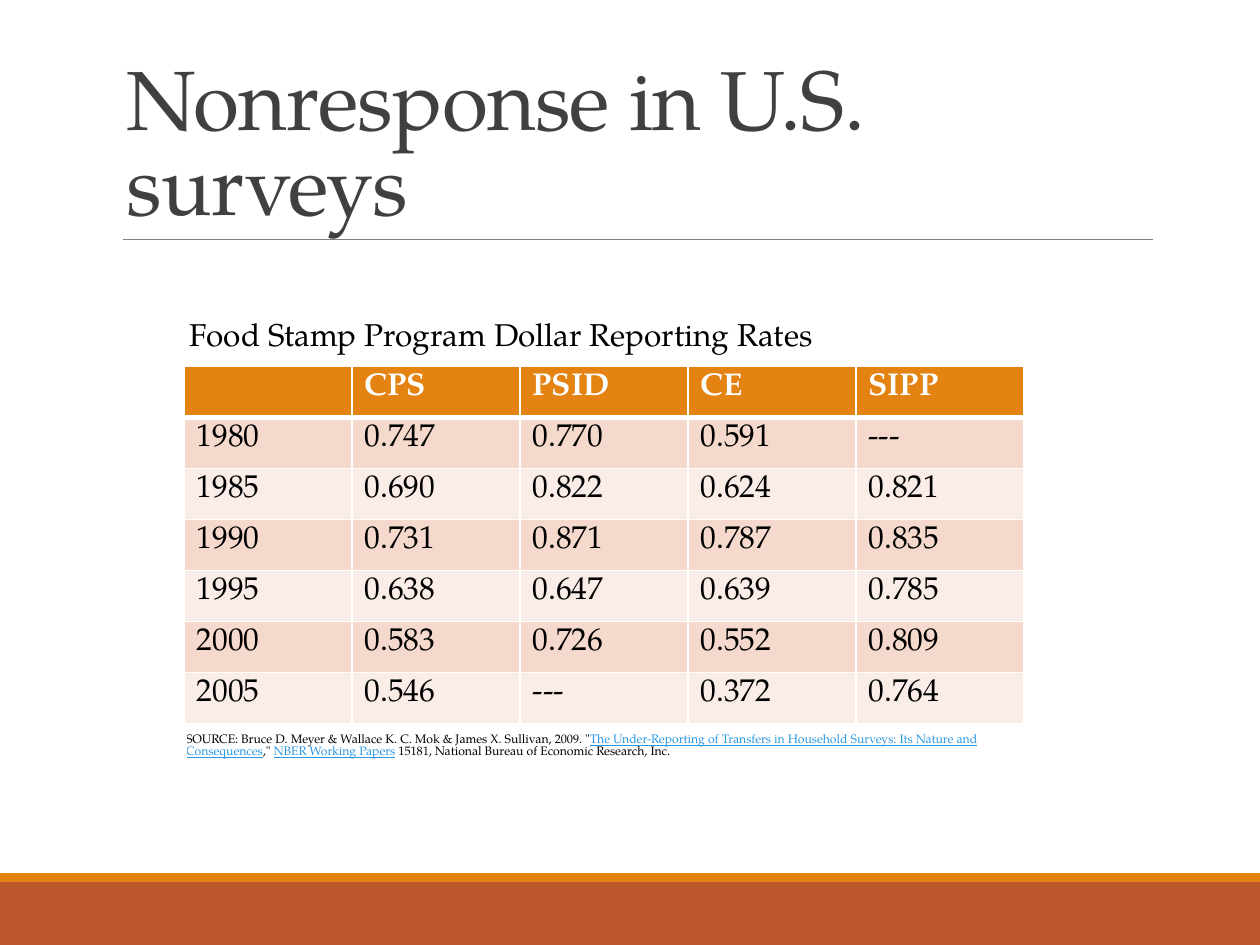
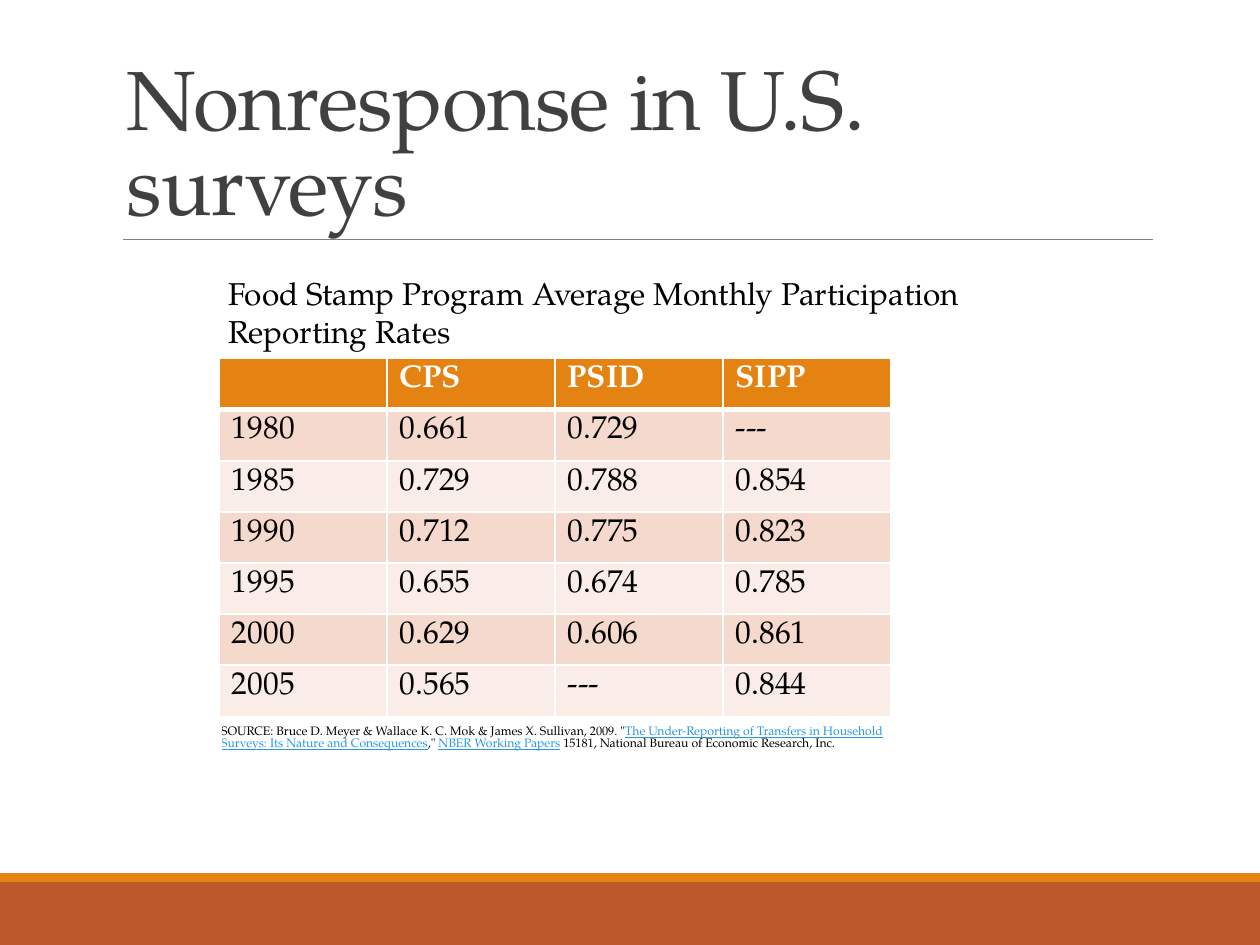
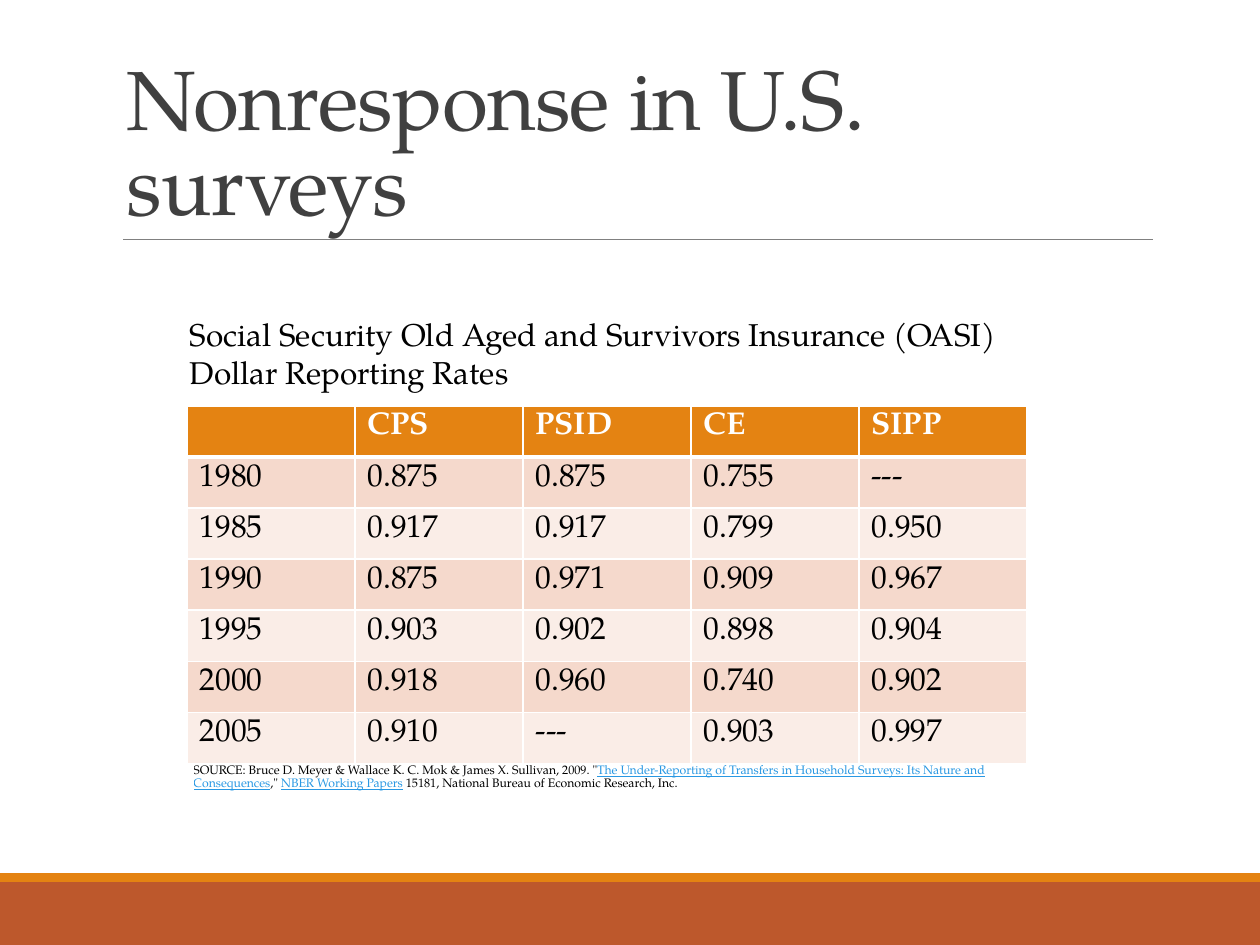
from dataclasses import dataclass

from lxml.etree import SubElement
from pptx import Presentation
from pptx.dml.color import RGBColor
from pptx.enum.shapes import MSO_CONNECTOR, MSO_SHAPE
from pptx.enum.text import MSO_ANCHOR
from pptx.oxml.ns import qn
from pptx.util import Cm, Pt


@dataclass(frozen=True)
class Theme:
    font: str = "TeX Gyre Pagella"
    title: str = "404040"
    text: str = "000000"
    white: str = "FFFFFF"
    link: str = "2998E3"
    rule: str = "808080"
    accent: str = "E48312"
    footer: str = "BD582C"
    row_tints: tuple = ("F5D9CC", "FAEDE7")
    title_size: int = 48
    body_size: int = 18
    source_size: int = 7


TITLE = "Nonresponse in U.S. surveys"
COL_WIDTH, ROW_HEIGHT = 10.16 / 3, 1.03
SOURCE_HEIGHT = 0.58

# (text, is a link)
SOURCE = [
    ('SOURCE: Bruce D. Meyer & Wallace K. C. Mok & James X. Sullivan, 2009. "', False),
    ("The Under-Reporting of Transfers in Household Surveys: Its Nature and Consequences", True),
    ('," ', False),
    ("NBER Working Papers", True),
    (" 15181, National Bureau of Economic Research, Inc.", False),
]

# Boxes are left, top, width, height; places are left, top; all in cm
SLIDES = [
    {
        "caption": "Food Stamp Program Dollar Reporting Rates",
        "caption_box": (3.58, 6.22, 17.88, 1.02),
        "table_at": (3.71, 7.38),
        "source_box": (3.75, 14.75, 17.2, SOURCE_HEIGHT),
        "rows": [
            ("", "CPS", "PSID", "CE", "SIPP"),
            ("1980", "0.747", "0.770", "0.591", "---"),
            ("1985", "0.690", "0.822", "0.624", "0.821"),
            ("1990", "0.731", "0.871", "0.787", "0.835"),
            ("1995", "0.638", "0.647", "0.639", "0.785"),
            ("2000", "0.583", "0.726", "0.552", "0.809"),
            ("2005", "0.546", "---", "0.372", "0.764"),
        ],
    },
    {
        "caption": "Food Stamp Program Average Monthly Participation Reporting Rates",
        "caption_box": (4.35, 5.4, 15.7, 1.8),
        "table_at": (4.42, 7.23),
        "source_box": (4.46, 14.59, 13.64, SOURCE_HEIGHT),
        "rows": [
            ("", "CPS", "PSID", "SIPP"),
            ("1980", "0.661", "0.729", "---"),
            ("1985", "0.729", "0.788", "0.854"),
            ("1990", "0.712", "0.775", "0.823"),
            ("1995", "0.655", "0.674", "0.785"),
            ("2000", "0.629", "0.606", "0.861"),
            ("2005", "0.565", "---", "0.844"),
        ],
    },
    {
        "caption": "Social Security Old Aged and Survivors Insurance (OASI) Dollar Reporting Rates",
        "caption_box": (3.58, 6.22, 17.88, 1.8),
        "table_at": (3.77, 8.18),
        "source_box": (3.9, 15.39, 17.2, SOURCE_HEIGHT),
        "rows": [
            ("", "CPS", "PSID", "CE", "SIPP"),
            ("1980", "0.875", "0.875", "0.755", "---"),
            ("1985", "0.917", "0.917", "0.799", "0.950"),
            ("1990", "0.875", "0.971", "0.909", "0.967"),
            ("1995", "0.903", "0.902", "0.898", "0.904"),
            ("2000", "0.918", "0.960", "0.740", "0.902"),
            ("2005", "0.910", "---", "0.903", "0.997"),
        ],
    },
]


def cm(box):
    return [Cm(v) for v in box]


class Deck:
    def __init__(self, theme):
        self.theme = theme
        self.prs = Presentation()
        self.prs.slide_width, self.prs.slide_height = Cm(25.4), Cm(19.05)
        self.s = None

    def new_slide(self):
        self.s = self.prs.slides.add_slide(self.prs.slide_layouts[6])
        self.band((0, 17.78, 25.4, 1.27), self.theme.footer)
        self.band((0, 17.6, 25.4, 0.18), self.theme.accent)
        self.rule(2.48, 23.24, 4.82)

    def style(self, r, size, color, bold=False):
        r.font.name = self.theme.font
        r.font.size = Pt(size)
        r.font.bold = bold
        r.font.color.rgb = RGBColor.from_string(color)

    def band(self, box, color):
        sp = self.s.shapes.add_shape(MSO_SHAPE.RECTANGLE, *cm(box))
        sp.shadow.inherit = False
        sp.fill.solid()
        sp.fill.fore_color.rgb = RGBColor.from_string(color)
        sp.line.fill.background()

    def rule(self, left, right, y):
        line = self.s.shapes.add_connector(
            MSO_CONNECTOR.STRAIGHT, *cm((left, y, right, y)))
        line.line.color.rgb = RGBColor.from_string(self.theme.rule)
        line.line.width = Pt(0.5)
        SubElement(line._element.spPr, qn("a:effectLst"))

    def text(self, text, box, size, color):
        sp = self.s.shapes.add_textbox(*cm(box))
        tf = sp.text_frame
        tf.word_wrap = True
        tf.text = text
        self.style(tf.paragraphs[0].runs[0], size, color)
        return tf

    def title(self, text):
        tf = self.text(text, (2.31, 0.78, 20.96, 4.04),
                       self.theme.title_size, self.theme.title)
        tf.vertical_anchor = MSO_ANCHOR.BOTTOM
        p = tf.paragraphs[0]
        p.line_spacing = 0.85
        p.runs[0].font._element.set("spc", "-50")

    def caption(self, text, box):
        self.text(text, box, self.theme.body_size, self.theme.text)

    def cell_borders(self, cell, bottom):
        """Draw white borders, 1 pt wide except at the bottom."""
        tcPr = cell._tc.get_or_add_tcPr()
        for side, width in (("L", 1), ("R", 1), ("T", 1), ("B", bottom)):
            ln = SubElement(tcPr, qn(f"a:ln{side}"), w=str(Pt(width)))
            fill = SubElement(ln, qn("a:solidFill"))
            SubElement(fill, qn("a:srgbClr"), val=self.theme.white)

    def table(self, rows, at):
        n_rows, n_cols = len(rows), len(rows[0])
        size = (n_cols * COL_WIDTH, n_rows * ROW_HEIGHT)
        table = self.s.shapes.add_table(n_rows, n_cols, *cm(at + size)).table
        for i, row in enumerate(rows):
            header = i == 0
            fill = self.theme.accent if header else self.theme.row_tints[(i - 1) % 2]
            color = self.theme.white if header else self.theme.text
            for j, value in enumerate(row):
                cell = table.cell(i, j)
                self.cell_borders(cell, 3 if header else 1)
                cell.fill.solid()
                cell.fill.fore_color.rgb = RGBColor.from_string(fill)
                cell.text = value
                for r in cell.text_frame.paragraphs[0].runs:
                    self.style(r, self.theme.body_size, color, header)

    def source(self, parts, box):
        table = self.s.shapes.add_table(1, 1, *cm(box)).table
        table.first_row = table.horz_banding = False
        cell = table.cell(0, 0)
        cell.fill.background()
        cell.vertical_anchor = MSO_ANCHOR.MIDDLE
        cell.margin_left = cell.margin_right = 0
        cell.margin_top = cell.margin_bottom = 0
        p = cell.text_frame.paragraphs[0]
        for text, is_link in parts:
            r = p.add_run()
            r.text = text
            self.style(r, self.theme.source_size,
                       self.theme.link if is_link else self.theme.text)
            r.font.underline = is_link


def main():
    deck = Deck(Theme())
    for content in SLIDES:
        deck.new_slide()
        deck.title(TITLE)
        deck.table(content["rows"], content["table_at"])
        deck.caption(content["caption"], content["caption_box"])
        deck.source(SOURCE, content["source_box"])
    deck.prs.save("out.pptx")


if __name__ == "__main__":
    main()
